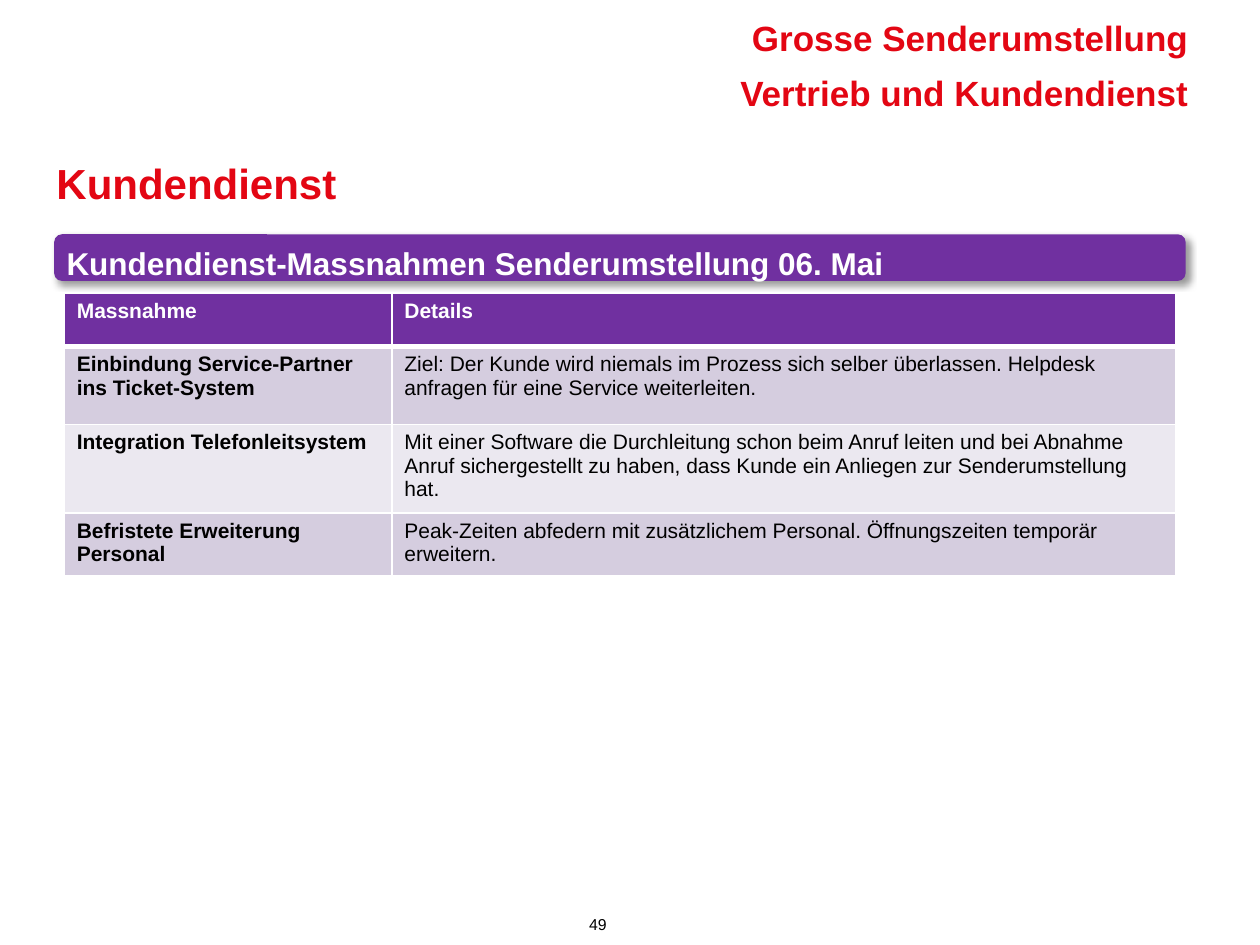
"""Build the customer service slide with its heading, banner and measures table."""
from dataclasses import dataclass

from lxml import etree
from pptx import Presentation
from pptx.dml.color import RGBColor
from pptx.enum.shapes import MSO_SHAPE
from pptx.enum.text import PP_ALIGN
from pptx.oxml import parse_xml
from pptx.oxml.ns import qn
from pptx.util import Inches, Pt

ROUNDED = MSO_SHAPE.ROUNDED_RECTANGLE
LEFT, CENTER, RIGHT = PP_ALIGN.LEFT, PP_ALIGN.CENTER, PP_ALIGN.RIGHT
NS = "http://schemas.openxmlformats.org/drawingml/2006/main"
COLORS = {
    "red": "E30613",
    "purple": "7030A0",
    "band_dark": "D5CDDF",
    "band_light": "EBE8F0",
    "white": "FFFFFF",
    "black": "000000",
}


@dataclass
class Label:
    text: str
    box: tuple[float, float, float, float]
    size: float
    color: str = "red"
    bold: bool = True
    align: PP_ALIGN = LEFT
    top: float = 0.08


LABELS = [
    Label("Kundendienst-Massnahmen Senderumstellung 06. Mai", (0.43, 1.86, 8.9, 0.37), 18, "white"),
    Label("49", (3.58, 7.21, 2.33, 0.29), 9, "black", False, CENTER, 0.05),
    Label("Grosse Senderumstellung", (4.29, 0.05, 5.24, 0.44), 20, align=RIGHT),
    Label("Vertrieb und Kundendienst", (4.29, 0.49, 5.24, 0.44), 20, align=RIGHT),
    Label("Kundendienst", (0.35, 1.15, 9.06, 0.55), 24, top=0.1),
]
COLUMNS = [2.6, 6.22]
HEIGHTS = [0.42, 0.62, 0.66, 0.47]
ROWS = [
    ("Massnahme", "Details"),
    (
        "Einbindung Service-Partner ins Ticket-System",
        "Ziel: Der Kunde wird niemals im Prozess sich selber überlassen. "
        "Helpdesk anfragen für eine Service weiterleiten.",
    ),
    (
        "Integration Telefonleitsystem",
        "Mit einer Software die Durchleitung schon beim Anruf leiten und bei Abnahme "
        "Anruf sichergestellt zu haben, dass Kunde ein Anliegen zur Senderumstellung hat.",
    ),
    (
        "Befristete Erweiterung Personal",
        "Peak-Zeiten abfedern mit zusätzlichem Personal. Öffnungszeiten temporär erweitern.",
    ),
]


def rgb(name: str) -> RGBColor:
    return RGBColor.from_string(COLORS[name])


def write(tf, text: str, size: float, color: str, bold: bool, align: PP_ALIGN = LEFT) -> None:
    p = tf.paragraphs[0]
    p.alignment = align
    r = p.add_run()
    r.text = text
    for key, value in {"name": "Arial", "size": Pt(size), "bold": bold}.items():
        setattr(r.font, key, value)
    r.font.color.rgb = rgb(color)


def add_label(s, label: Label) -> None:
    tf = s.shapes.add_textbox(*map(Inches, label.box)).text_frame
    for key, value in {"word_wrap": True, "margin_top": Inches(label.top)}.items():
        setattr(tf, key, value)
    write(tf, label.text, label.size, label.color, label.bold, label.align)


def add_banner(s) -> None:
    sp = s.shapes.add_shape(ROUNDED, *map(Inches, (0.43, 1.86, 8.98, 0.37)))
    sp.fill.solid()
    sp.fill.fore_color.rgb = rgb("purple")
    sp.line.fill.background()
    sp.shadow.inherit = False
    effects = sp._element.spPr.find(qn("a:effectLst"))
    effects.append(parse_xml(
        f'<a:outerShdw xmlns:a="{NS}" blurRad="{Pt(4)}" dist="{Pt(3)}" dir="2700000" '
        f'algn="tl" rotWithShape="0"><a:srgbClr val="{COLORS["black"]}">'
        '<a:alpha val="40000"/></a:srgbClr></a:outerShdw>'
    ))


def add_border(cell, side: str, width: float) -> None:
    ln = etree.SubElement(cell._tc.get_or_add_tcPr(), qn(f"a:ln{side}"), w=str(Pt(width)))
    fill = etree.SubElement(ln, qn("a:solidFill"))
    etree.SubElement(fill, qn("a:srgbClr"), val=COLORS["white"])


def add_measures(s) -> None:
    box = (0.51, 2.33, sum(COLUMNS), sum(HEIGHTS))
    table = s.shapes.add_table(len(ROWS), len(COLUMNS), *map(Inches, box)).table
    for column, width in zip(table.columns, COLUMNS):
        column.width = Inches(width)
    for i, (height, texts) in enumerate(zip(HEIGHTS, ROWS)):
        table.rows[i].height = Inches(height)
        header = i == 0
        fill = "purple" if header else "band_dark" if i % 2 else "band_light"
        borders = {"L": 1, "R": 1, "T": 3 if i == 1 else 1, "B": 3 if header else 1}
        for j, text in enumerate(texts):
            cell = table.cell(i, j)
            for side, width in borders.items():
                add_border(cell, side, width)
            cell.fill.solid()
            cell.fill.fore_color.rgb = rgb(fill)
            write(cell.text_frame, text, 12, "white" if header else "black", header or j == 0)


def main() -> None:
    prs = Presentation()
    prs.slide_width, prs.slide_height = Inches(10), Inches(7.5)
    s = prs.slides.add_slide(prs.slide_layouts[6])
    add_banner(s)
    for label in LABELS:
        add_label(s, label)
    add_measures(s)
    prs.save("out.pptx")


if __name__ == "__main__":
    main()
